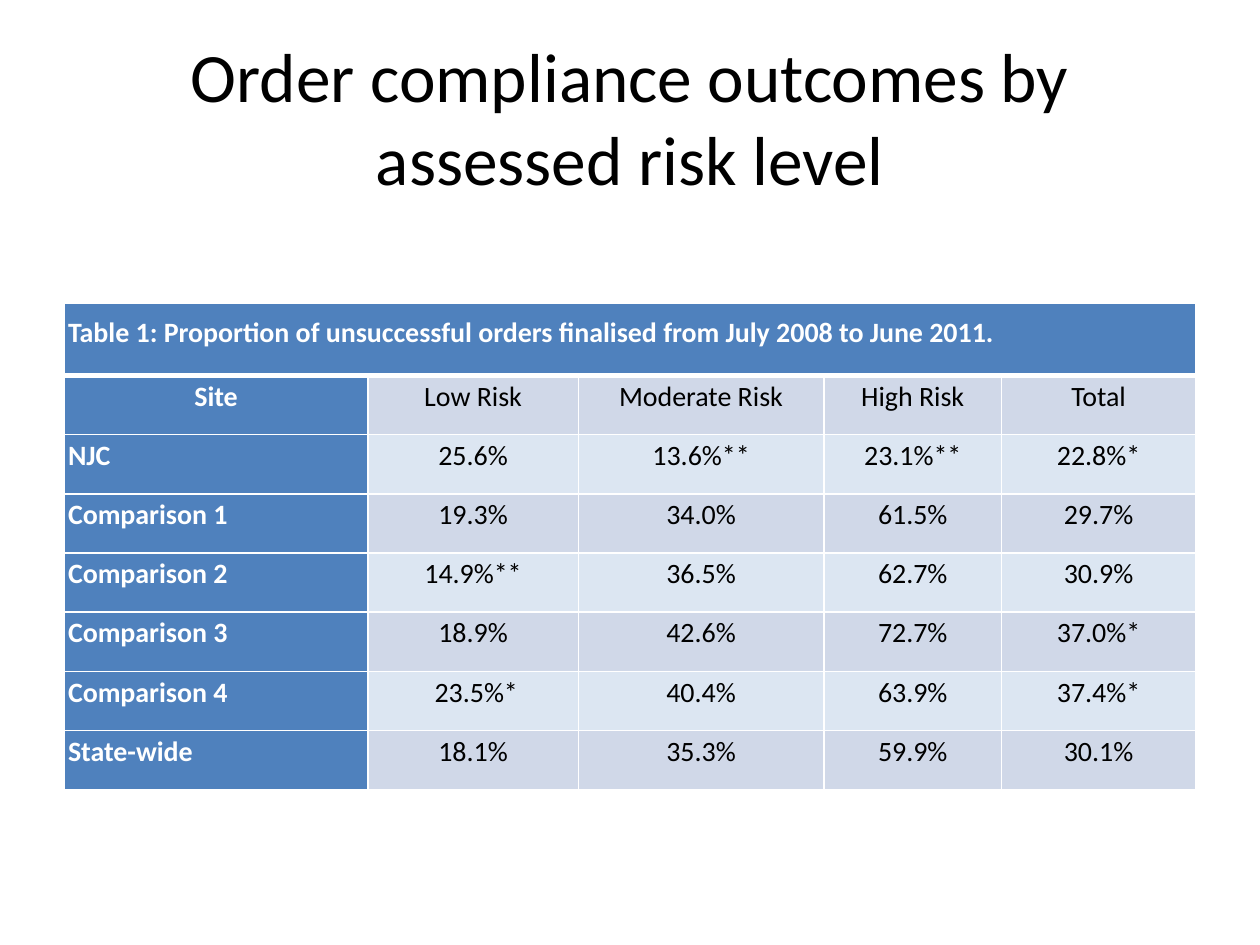
from dataclasses import dataclass

from lxml import etree
from pptx import Presentation
from pptx.dml.color import RGBColor
from pptx.enum import text
from pptx.oxml import ns
from pptx.util import Inches, Pt


@dataclass(frozen=True)
class Theme:
    font: str = "Calibri"
    title_size: float = 39.6
    table_size: float = 16
    black: str = "000000"
    white: str = "FFFFFF"
    header: str = "4F81BD"
    bands: tuple = ("D0D8E8", "DCE6F2")


theme = Theme()


def write_text(frame, content, size, color, bold=False, align=text.PP_ALIGN.CENTER, line_points=None):
    frame.text = content
    frame.vertical_anchor = text.MSO_ANCHOR.MIDDLE
    paragraph = frame.paragraphs[0]
    paragraph.alignment = align
    if line_points:
        paragraph.line_spacing = Pt(line_points)
        paragraph.space_before = paragraph.space_after = Pt(2)
    font = paragraph.runs[0].font
    font.name, font.size, font.bold = theme.font, Pt(size), bold
    font.color.rgb = RGBColor.from_string(color)


def set_borders(cell, **points):
    """Draw white cell borders; the keywords are L, R, T and B."""
    properties = cell._tc.get_or_add_tcPr()
    for side, width in points.items():
        line = etree.SubElement(properties, ns.qn(f"a:ln{side}"), w=str(Pt(width)))
        fill = etree.SubElement(line, ns.qn("a:solidFill"))
        etree.SubElement(fill, ns.qn("a:srgbClr"), val=theme.white)


presentation = Presentation()
presentation.slide_width, presentation.slide_height = Inches(10), Inches(7.5)
slide = presentation.slides.add_slide(presentation.slide_layouts[5])

title = slide.shapes.title
title.left, title.top, title.width, title.height = Inches(0.5), Inches(0.3), Inches(9), Inches(1.25)
title.text_frame.auto_size = text.MSO_AUTO_SIZE.NONE
write_text(title.text_frame, "Order compliance outcomes by assessed risk level",
           theme.title_size, theme.black)

caption = "Table 1: Proportion of unsuccessful orders finalised from July 2008 to June 2011."
rows = [
    (caption, "", "", "", ""),
    ("Site", "Low Risk", "Moderate Risk", "High Risk", "Total"),
    ("NJC", "25.6%", "13.6%**", "23.1%**", "22.8%*"),
    ("Comparison 1", "19.3%", "34.0%", "61.5%", "29.7%"),
    ("Comparison 2", "14.9%**", "36.5%", "62.7%", "30.9%"),
    ("Comparison 3", "18.9%", "42.6%", "72.7%", "37.0%*"),
    ("Comparison 4", " 23.5%*", "40.4%", "63.9%", "37.4%*"),
    ("State-wide", "18.1%", "35.3%", "59.9%", "30.1%"),
]
column_widths = [2.41, 1.67, 1.95, 1.41, 1.54]
row_heights = [0.57] + [0.47] * (len(rows) - 1)

table = slide.shapes.add_table(
    len(rows), len(column_widths), Inches(0.51), Inches(2.41),
    Inches(sum(column_widths)), Inches(sum(row_heights))).table
for column, width in zip(table.columns, column_widths):
    column.width = Inches(width)
for row, height in zip(table.rows, row_heights):
    row.height = Inches(height)
table.cell(0, 0).merge(table.cell(0, len(column_widths) - 1))

for row_index, values in enumerate(rows):
    for column_index, value in enumerate(values):
        cell = table.cell(row_index, column_index)
        is_header = row_index == 0 or column_index == 0
        set_borders(cell, L=1, R=1, T=3 if row_index == 1 else 1, B=3 if row_index == 0 else 1)
        cell.fill.solid()
        cell.fill.fore_color.rgb = RGBColor.from_string(
            theme.header if is_header else theme.bands[(row_index - 1) % 2])
        cell.margin_left = cell.margin_right = Inches(0.03)
        cell.margin_top = cell.margin_bottom = 0
        cell.vertical_anchor = text.MSO_ANCHOR.MIDDLE
        if value:
            left_aligned = is_header and value != "Site"
            write_text(cell.text_frame, value, theme.table_size,
                       theme.white if is_header else theme.black, bold=is_header,
                       align=text.PP_ALIGN.LEFT if left_aligned else text.PP_ALIGN.CENTER,
                       line_points=12 if row_index == 0 else 10)

presentation.save("out.pptx")
